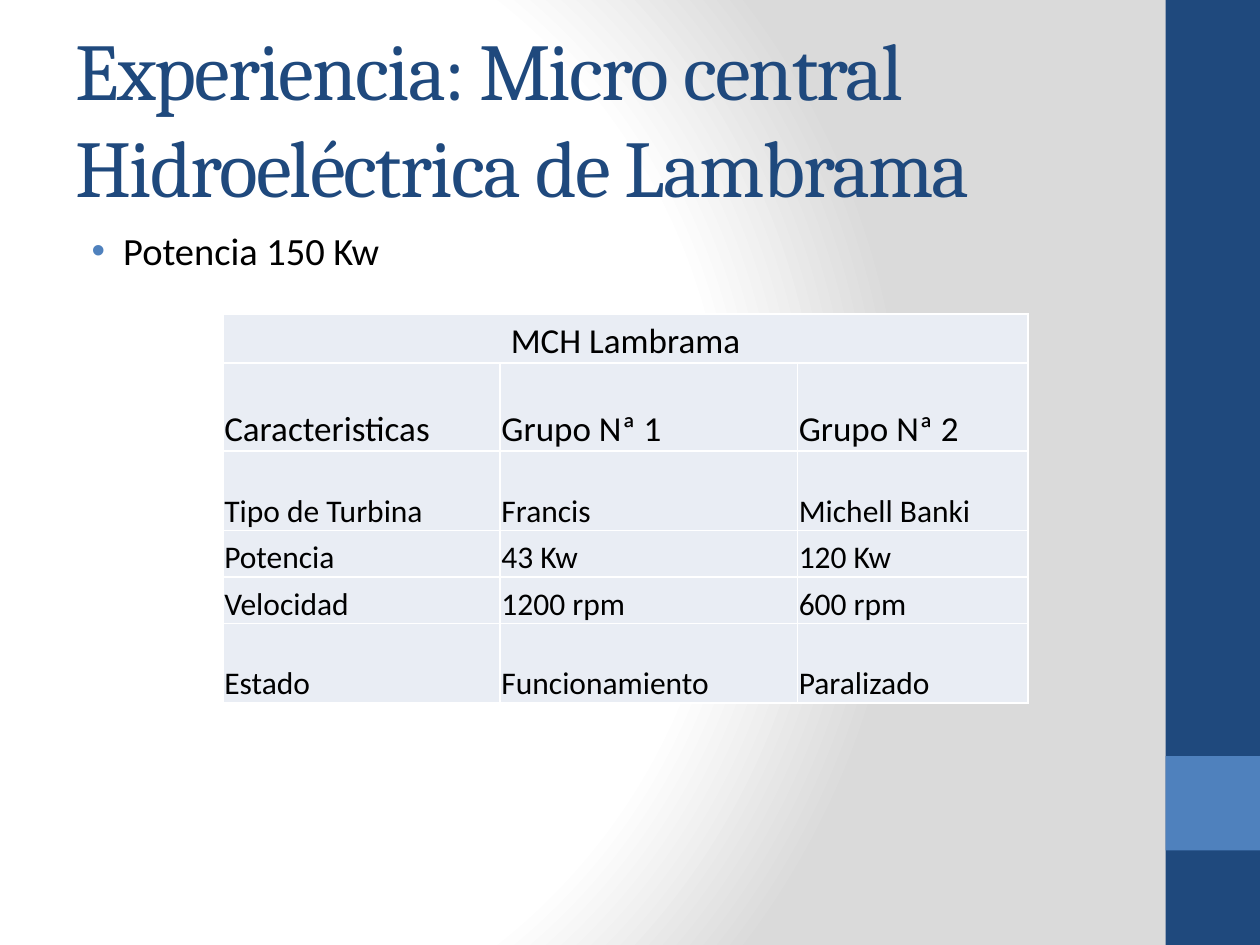
import pptx
import pptx.dml.color
import pptx.enum.shapes
import pptx.enum.text
import pptx.oxml
import pptx.oxml.ns
import pptx.util
from dataclasses import dataclass

Inches = pptx.util.Inches
Pt = pptx.util.Pt
ALIGN = pptx.enum.text.PP_ALIGN
ANCHOR = pptx.enum.text.MSO_ANCHOR


@dataclass(frozen=True)
class Theme:
    navy: str = "1F497D"
    blue: str = "4F81BD"
    cell: str = "E9EDF4"
    white: str = "FFFFFF"
    grey: str = "DADADA"
    black: str = "000000"
    heading_font: str = "Cambria"
    body_font: str = "Calibri"
    title_size: int = 46
    bullet_size: int = 22
    head_size: int = 20
    cell_size: int = 18


def rgb(value):
    return pptx.dml.color.RGBColor.from_string(value)


def parse_xml(text):
    return pptx.oxml.parse_xml(text.replace(">", f" {pptx.oxml.ns.nsdecls('a', 'p')}>", 1))


def write(frame, text, *, font, size, color, align=ALIGN.LEFT):
    """Put one formatted run in the first paragraph and return both."""
    para = frame.paragraphs[0]
    para.alignment = align
    span = para.add_run()
    span.text = text
    span.font.name = font
    span.font.size = Pt(size)
    span.font.color.rgb = rgb(color)
    return para, span


class Page:
    def __init__(self, deck, theme):
        self.theme = theme
        self.slide = deck.slides.add_slide(deck.slide_layouts[5])

    def background(self):
        stops = ((0, self.theme.white), (75, self.theme.white), (100, self.theme.grey))
        stop_xml = "".join(
            f'<a:gs pos="{pos * 1000}"><a:srgbClr val="{color}"/></a:gs>' for pos, color in stops
        )
        self.slide.element.cSld.insert(0, parse_xml(
            f'<p:bg><p:bgPr><a:gradFill rotWithShape="1"><a:gsLst>{stop_xml}</a:gsLst>'
            '<a:path path="circle"><a:fillToRect l="20000" t="50000" r="100000" b="50000"/>'
            "</a:path></a:gradFill><a:effectLst/></p:bgPr></p:bg>"
        ))

    def rectangle(self, left, top, width, height, color):
        box = self.slide.shapes.add_shape(
            pptx.enum.shapes.MSO_SHAPE.RECTANGLE,
            Inches(left), Inches(top), Inches(width), Inches(height),
        )
        box.shadow.inherit = False
        box.fill.solid()
        box.fill.fore_color.rgb = rgb(color)
        box.line.fill.background()

    def title(self, text, left, top, width, height):
        box = self.slide.shapes.title
        box.left, box.top = Inches(left), Inches(top)
        box.width, box.height = Inches(width), Inches(height)
        frame = box.text_frame
        frame.word_wrap = True
        frame.auto_size = pptx.enum.text.MSO_AUTO_SIZE.NONE
        frame.vertical_anchor = ANCHOR.MIDDLE
        para, span = write(frame, text, font=self.theme.heading_font,
                           size=self.theme.title_size, color=self.theme.navy)
        span.font._element.set("spc", "-100")

    def bullet(self, text, left, top, width, height):
        box = self.slide.shapes.add_textbox(
            Inches(left), Inches(top), Inches(width), Inches(height))
        box.text_frame.word_wrap = True
        para, span = write(box.text_frame, text, font=self.theme.body_font,
                           size=self.theme.bullet_size, color=self.theme.black)
        para.space_before = Pt(0.2 * self.theme.bullet_size)
        properties = para._p.get_or_add_pPr()
        properties.set("marL", str(Inches(0.38)))
        properties.set("indent", str(Inches(-0.25)))
        for mark in (f'<a:buClr><a:srgbClr val="{self.theme.blue}"/></a:buClr>',
                     '<a:buFont typeface="Arial"></a:buFont>',
                     '<a:buChar char="•"></a:buChar>'):
            properties.append(parse_xml(mark))

    def style_cell(self, cell):
        cell.margin_left = cell.margin_right = cell.margin_top = Inches(0.01)
        cell.margin_bottom = 0
        cell.vertical_anchor = ANCHOR.BOTTOM
        properties = cell._tc.get_or_add_tcPr()
        for side in ("lnL", "lnR", "lnT", "lnB"):
            properties.append(parse_xml(
                f'<a:{side}><a:solidFill><a:srgbClr val="{self.theme.white}"/>'
                f"</a:solidFill></a:{side}>"
            ))
            properties[-1].set("w", str(Pt(1)))
        cell.fill.solid()
        cell.fill.fore_color.rgb = rgb(self.theme.cell)

    def table(self, caption, rows, left, top, widths, heights):
        table = self.slide.shapes.add_table(
            len(heights), len(widths), Inches(left), Inches(top),
            Inches(sum(widths)), Inches(sum(heights)),
        ).table
        table.first_row = table.horz_banding = False
        for column, width in zip(table.columns, widths):
            column.width = Inches(width)
        for row, height in zip(table.rows, heights):
            row.height = Inches(height)
        for cell in table.iter_cells():
            self.style_cell(cell)

        # Caption across the full width
        table.cell(0, 0).merge(table.cell(0, len(widths) - 1))
        text_format = dict(font=self.theme.body_font, color=self.theme.black)
        write(table.cell(0, 0).text_frame, caption, size=self.theme.head_size,
              align=ALIGN.CENTER, **text_format)

        # Column heads, then values
        for row_number, texts in enumerate(rows, 1):
            size = self.theme.head_size if row_number == 1 else self.theme.cell_size
            for column_number, text in enumerate(texts):
                write(table.cell(row_number, column_number).text_frame, text,
                      size=size, **text_format)


def main():
    deck = pptx.Presentation()
    deck.slide_width, deck.slide_height = Inches(10), Inches(7.5)
    theme = Theme()
    page = Page(deck, theme)

    # Backdrop and side band
    page.background()
    page.rectangle(9.25, 0, 0.75, 7.5, theme.navy)
    page.rectangle(9.25, 6, 0.75, 0.75, theme.blue)

    # Heading and bullet
    page.title("Experiencia: Micro central Hidroeléctrica de Lambrama", 0.5, 0.3, 8.33, 1.25)
    page.bullet("Potencia 150 Kw", 0.5, 1.75, 8.33, 5.25)

    # Comparison of the two generating groups
    groups = [
        ("Caracteristicas", "Grupo Nª 1", "Grupo Nª 2"),
        ("Tipo de Turbina", "Francis", "Michell Banki"),
        ("Potencia", "43 Kw", "120 Kw"),
        ("Velocidad", "1200 rpm", "600 rpm"),
        ("Estado", "Funcionamiento", "Paralizado"),
    ]
    page.table("MCH Lambrama", groups, 1.77, 2.49,
               widths=(2.2, 2.36, 1.83), heights=(0.39, 0.7, 0.63, 0.37, 0.37, 0.63))

    deck.save("out.pptx")


if __name__ == "__main__":
    main()
